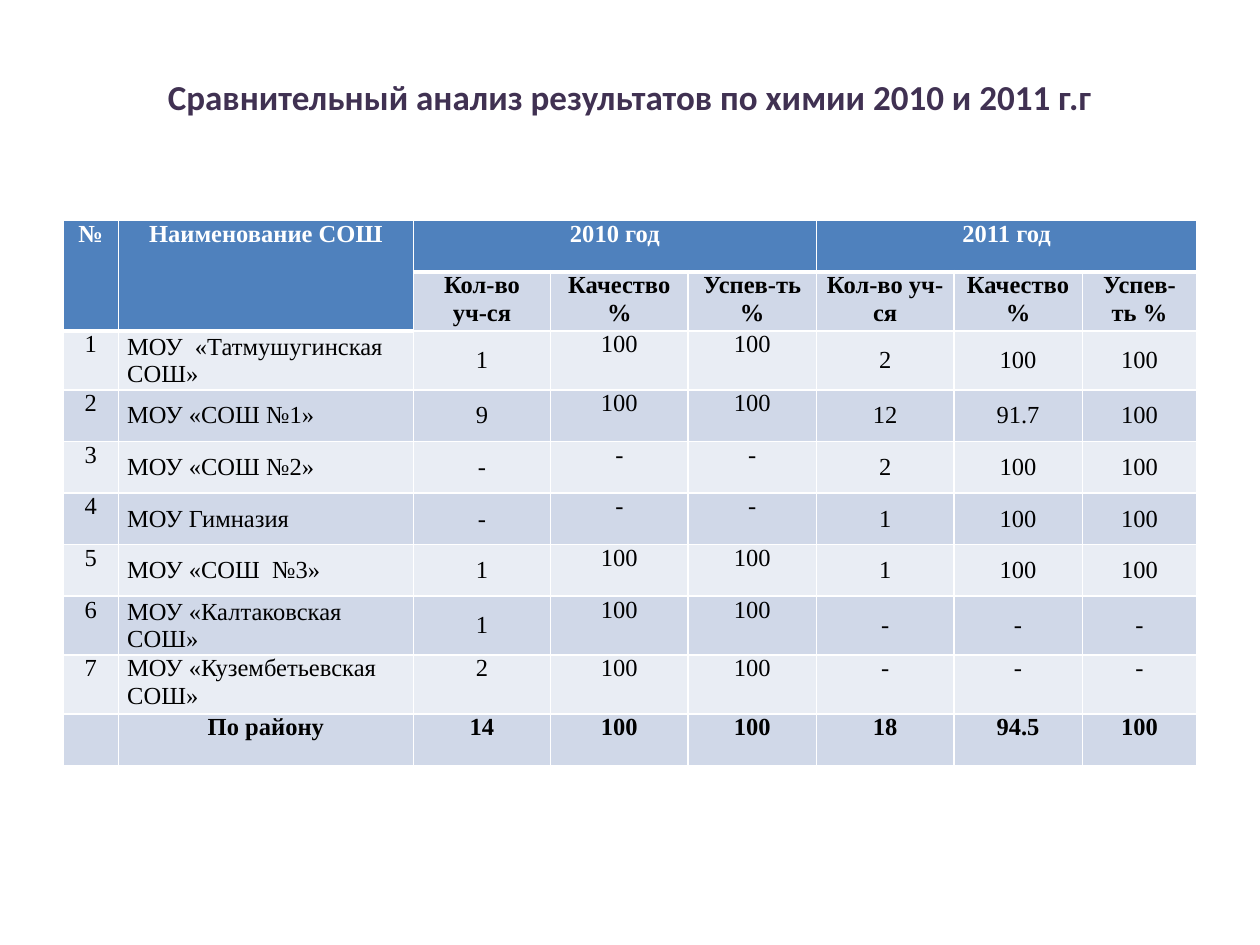
from dataclasses import dataclass

from lxml import etree
from pptx import Presentation
from pptx.dml.color import RGBColor
from pptx.enum.text import MSO_ANCHOR, PP_ALIGN
from pptx.oxml.ns import qn
from pptx.util import Pt

TOP, MIDDLE = MSO_ANCHOR.TOP, MSO_ANCHOR.MIDDLE
LEFT, CENTER = PP_ALIGN.LEFT, PP_ALIGN.CENTER


@dataclass(frozen=True)
class Theme:
    title: str = "403152"
    head: str = "4F81BD"
    dark: str = "D0D8E8"
    light: str = "E9EDF4"
    ink: str = "000000"
    white: str = "FFFFFF"
    title_font: str = "Calibri"
    font: str = "Times New Roman"
    title_size: float = 20
    size: float = 14
    thin: float = 1
    thick: float = 3


@dataclass(frozen=True)
class Look:
    fill: str
    ink: str = "000000"
    bold: bool = False
    align: PP_ALIGN = CENTER
    anchor: MSO_ANCHOR = TOP
    after: float = 0


@dataclass(frozen=True)
class School:
    name: str
    marks: tuple[str, ...]
    anchor: MSO_ANCHOR = MIDDLE


THEME = Theme()
TITLE = "Сравнительный анализ результатов по химии 2010 и 2011 г.г"
WIDTHS = (31.7, 168.5, 78.5, 78.5, 73.4, 78.5, 73.4, 65.5)
ROW = 29.5
SPACED = (0, 3, 4)  # columns set at the top of the cell, with space after
HEADS = {0: ("№", 1, 0), 1: ("Наименование СОШ", 1, 1),
         2: ("2010 год", 0, 4), 5: ("2011 год", 0, 7)}  # text, last row, last column
LABELS = ("Кол-во\nуч-ся", "Качество\n%", "Успев-ть %",
          "Кол-во уч-ся", "Качество\n%", "Успев-ть %")
SCHOOLS = (
    School("МОУ  «Татмушугинская СОШ»", ("1", "100", "100", "2", "100", "100")),
    School("МОУ «СОШ №1»", ("9", "100", "100", "12", "91.7", "100")),
    School("МОУ «СОШ №2»", ("-", "-", "-", "2", "100", "100")),
    School("МОУ Гимназия", ("-", "-", "-", "1", "100", "100")),
    School("МОУ «СОШ  №3»", ("1", "100", "100", "1", "100", "100")),
    School("МОУ «Калтаковская СОШ»", ("1", "100", "100", "-", "-", "-")),
    School("МОУ «Кузембетьевская СОШ»", ("2", "100", "100", "-", "-", "-"), TOP),
)
TOTAL = ("", "По району", "14", "100", "100", "18", "94.5", "100")


def style(frame, font: str, size: float, color: str, bold: bool) -> None:
    for para in frame.paragraphs:
        for run in para.runs:
            run.font.name = font
            run.font.size = Pt(size)
            run.font.bold = bold
            run.font.color.rgb = RGBColor.from_string(color)


def edge(cell, row: int) -> None:
    """Draw white cell borders, thick between the year heads and their labels."""
    props = cell._tc.get_or_add_tcPr()
    widths = {"lnL": THEME.thin, "lnR": THEME.thin,
              "lnT": THEME.thick if row == 1 else THEME.thin,
              "lnB": THEME.thick if row == 0 else THEME.thin}
    for place, (tag, width) in enumerate(widths.items()):
        line = etree.Element(qn(f"a:{tag}"), w=str(Pt(width)))
        fill = etree.SubElement(line, qn("a:solidFill"))
        etree.SubElement(fill, qn("a:srgbClr"), val=THEME.white)
        props.insert(place, line)


def put(cell, text: str, look: Look) -> None:
    cell.fill.solid()
    cell.fill.fore_color.rgb = RGBColor.from_string(look.fill)
    if not text:
        return
    cell.margin_left = cell.margin_right = Pt(5)
    cell.margin_top = cell.margin_bottom = Pt(0)
    cell.vertical_anchor = look.anchor
    cell.text_frame.text = text
    for para in cell.text_frame.paragraphs:
        para.alignment = look.align
        para.space_after = Pt(look.after)
    style(cell.text_frame, THEME.font, THEME.size, look.ink, look.bold)


def add_title(slide) -> None:
    box = slide.shapes.add_textbox(Pt(36), Pt(21.6), Pt(648), Pt(90))
    frame = box.text_frame
    frame.word_wrap = True
    frame.vertical_anchor = MIDDLE
    frame.margin_bottom = Pt(26)
    frame.text = TITLE
    frame.paragraphs[0].alignment = CENTER
    style(frame, THEME.title_font, THEME.title_size, THEME.title, True)


def add_grid(slide) -> None:
    count = len(SCHOOLS) + 3
    grid = slide.shapes.add_table(count, len(WIDTHS), Pt(36), Pt(126),
                                  Pt(sum(WIDTHS)), Pt(ROW * count)).table
    for col, width in zip(grid.columns, WIDTHS):
        col.width = Pt(width)
    for row in grid.rows:
        row.height = Pt(ROW)

    head = Look(THEME.head, THEME.white, True, after=6)
    for cell in grid.rows[0].cells:
        put(cell, "", head)
    for col, (text, last_row, last_col) in HEADS.items():
        grid.cell(0, col).merge(grid.cell(last_row, last_col))
        put(grid.cell(0, col), text, head)

    for col in range(2):
        put(grid.cell(1, col), "", head)
    for col, text in enumerate(LABELS, 2):
        put(grid.cell(1, col), text, Look(THEME.dark, THEME.ink, True))

    for num, school in enumerate(SCHOOLS, 1):
        fill = THEME.light if num % 2 else THEME.dark
        for col, text in enumerate((str(num), school.name, *school.marks)):
            spaced = col in SPACED
            look = Look(fill, THEME.ink, align=LEFT if col == 1 else CENTER,
                        anchor=TOP if spaced else school.anchor,
                        after=6 if spaced else 0)
            put(grid.cell(num + 1, col), text, look)

    for col, text in enumerate(TOTAL):
        put(grid.cell(count - 1, col), text, Look(THEME.dark, THEME.ink, True, after=6))

    for num, row in enumerate(grid.rows):
        for cell in row.cells:
            edge(cell, num)


def main() -> None:
    deck = Presentation()
    deck.slide_width, deck.slide_height = Pt(720), Pt(540)
    slide = deck.slides.add_slide(deck.slide_layouts[6])
    add_title(slide)
    add_grid(slide)
    deck.save("out.pptx")


if __name__ == "__main__":
    main()
